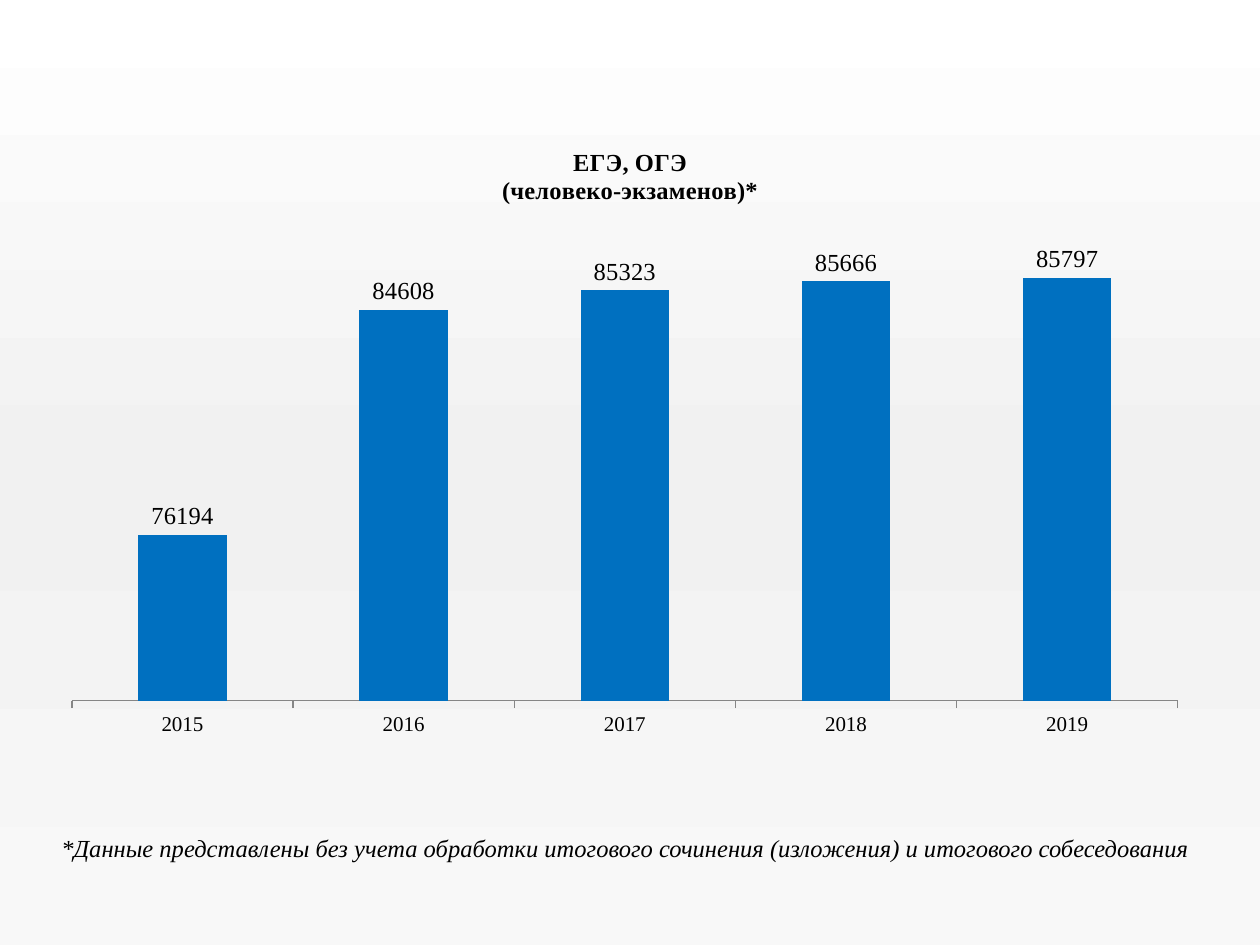
from copy import deepcopy

from pptx import Presentation
from pptx.chart.data import CategoryChartData
from pptx.dml.color import RGBColor
from pptx.enum.chart import XL_CHART_TYPE, XL_LABEL_POSITION, XL_TICK_MARK
from pptx.oxml import parse_xml
from pptx.oxml.ns import nsdecls, qn
from pptx.util import Pt

COLUMNS = XL_CHART_TYPE.COLUMN_CLUSTERED
OUTSIDE_END = XL_LABEL_POSITION.OUTSIDE_END
TICK_OUTSIDE = XL_TICK_MARK.OUTSIDE

EMU_PER_PX = 914400 / 126
FONT = "Times New Roman"
BLACK = "000000"
BLUE = "0070C0"
GREY = "868686"
BACKGROUND_STOPS = [(0, "FFFFFF"), (0.5, "F1F1F1"), (1, "F8F8F8")]

EXAMS_BY_YEAR = {
    "2015": 76194,
    "2016": 84608,
    "2017": 85323,
    "2018": 85666,
    "2019": 85797,
}
CHART_TITLE = ["ЕГЭ, ОГЭ", "(человеко-экзаменов)*"]
FOOTNOTE = (
    "*Данные представлены без учета обработки итогового сочинения "
    "(изложения) и итогового собеседования"
)


def px(*lengths):
    return [round(length * EMU_PER_PX) for length in lengths]


def color(value):
    return RGBColor.from_string(value)


def style_font(font, size, bold=False, italic=False):
    font.name = FONT
    font.size = Pt(size)
    font.bold = bold
    font.italic = italic
    font.color.rgb = color(BLACK)


def set_background(page):
    fill = page.background.fill
    fill.gradient()
    fill.gradient_angle = 270
    stop_list = page.element.xpath(".//a:gsLst")[0]
    stop_list.insert(1, deepcopy(stop_list[0]))
    for stop, (position, value) in zip(fill.gradient_stops, BACKGROUND_STOPS):
        stop.position = position
        stop.color.rgb = color(value)


def place_chart_part(part, index, target="", **fractions):
    for old_layout in part.findall(qn("c:layout")):
        part.remove(old_layout)
    modes = "".join(f'<c:{axis}Mode val="edge"/>' for axis in "xy")
    lengths = "".join(f'<c:{key} val="{value}"/>' for key, value in fractions.items())
    layout = parse_xml(
        f'<c:layout {nsdecls("c")}><c:manualLayout>'
        f"{target}{modes}{lengths}</c:manualLayout></c:layout>"
    )
    part.insert(index, layout)


def add_chart_title(chart):
    frame = chart.chart_title.text_frame
    for number, line in enumerate(CHART_TITLE):
        para = frame.add_paragraph() if number else frame.paragraphs[0]
        span = para.add_run()
        span.text = line
        style_font(span.font, 14, bold=True)
    place_chart_part(chart.chart_title.element, 1, x=0.39, y=0.04)


def format_axes(chart):
    years = chart.category_axis
    years.major_tick_mark = TICK_OUTSIDE
    years.has_major_gridlines = False
    years.format.line.color.rgb = color(GREY)
    years.format.line.width = Pt(0.75)
    style_font(years.tick_labels.font, 12)

    values = chart.value_axis
    values.minimum_scale = 70000
    values.maximum_scale = 88000
    values.major_unit = 2000
    values.has_major_gridlines = False
    values.visible = False


def format_columns(chart):
    plot = chart.plots[0]
    plot.gap_width = 150
    plot.vary_by_categories = False
    series = plot.series[0]
    series.format.fill.solid()
    series.format.fill.fore_color.rgb = color(BLUE)
    labels = series.data_labels
    labels.show_value = True
    labels.position = OUTSIDE_END
    style_font(labels.font, 14)


def add_exam_chart(page):
    data = CategoryChartData()
    data.categories = list(EXAMS_BY_YEAR)
    data.add_series("Series 1", list(EXAMS_BY_YEAR.values()))
    chart = page.shapes.add_chart(COLUMNS, *px(49, 118, 1152, 630), data).chart
    chart.has_legend = False
    style_font(chart.font, 12)
    add_chart_title(chart)
    format_axes(chart)
    format_columns(chart)
    plot_area = chart.element.xpath(".//c:plotArea")[0]
    inner = '<c:layoutTarget val="inner"/>'
    place_chart_part(plot_area, 0, inner, x=0.02, y=0.16, w=0.96, h=0.765)


def add_footnote(page):
    box = page.shapes.add_textbox(*px(49, 827, 1172, 43))
    box.text_frame.word_wrap = True
    span = box.text_frame.paragraphs[0].add_run()
    span.text = FOOTNOTE
    style_font(span.font, 14, italic=True)


def main():
    deck = Presentation()
    deck.slide_width, deck.slide_height = px(1260, 945)
    page = deck.slides.add_slide(deck.slide_layouts[6])
    set_background(page)
    add_exam_chart(page)
    add_footnote(page)
    deck.save("out.pptx")


if __name__ == "__main__":
    main()
